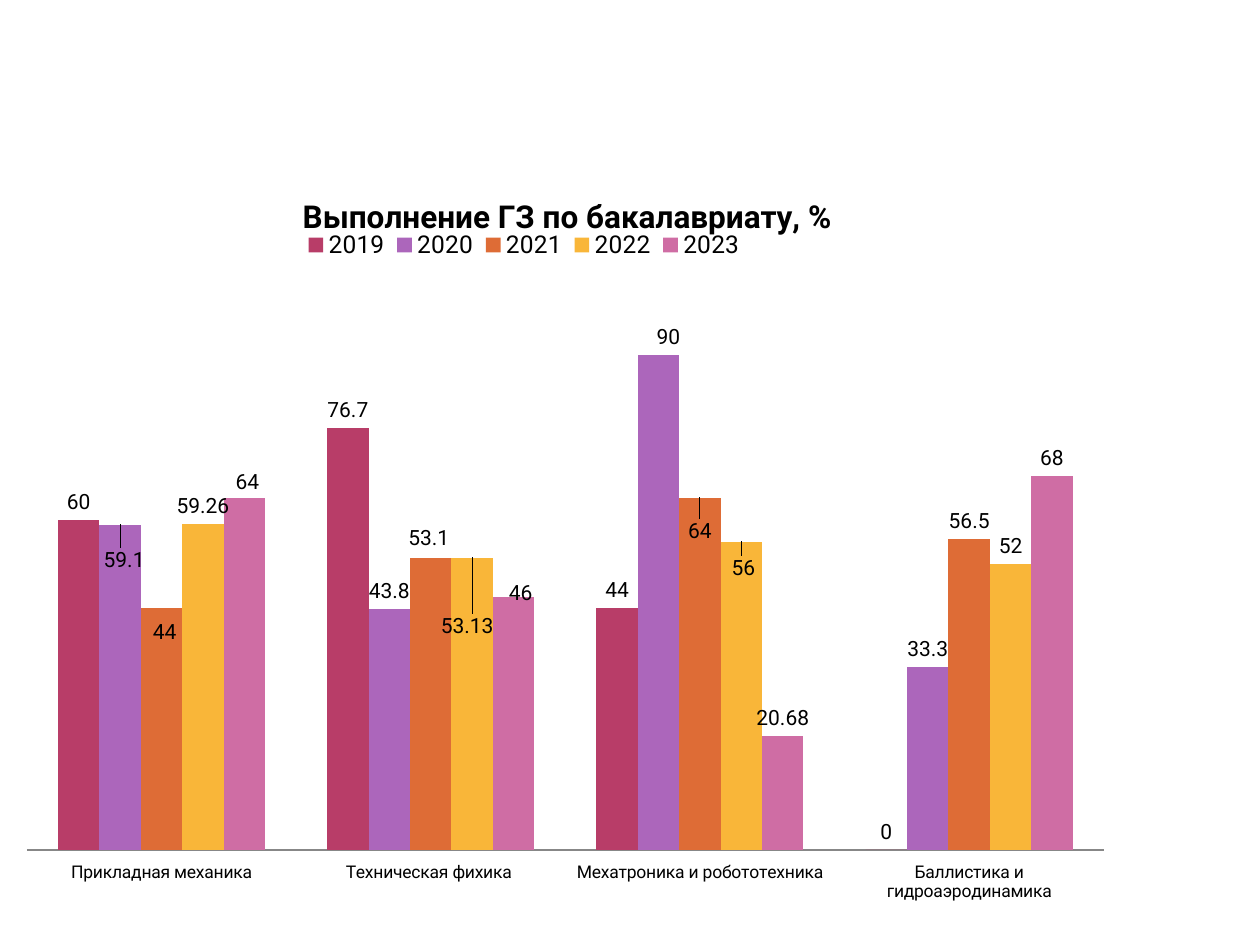
from dataclasses import dataclass

from lxml import etree
from pptx import Presentation
from pptx.chart.data import CategoryChartData
from pptx.dml.color import RGBColor
from pptx.enum.chart import XL_CHART_TYPE as ChartType
from pptx.enum.chart import XL_LABEL_POSITION as LabelPos
from pptx.enum.chart import XL_LEGEND_POSITION as LegendPos
from pptx.enum.chart import XL_TICK_LABEL_POSITION as TickLabelPos
from pptx.enum.chart import XL_TICK_MARK as TickMark
from pptx.oxml.ns import qn
from pptx.util import Emu, Pt

PX = 914400 // 126
CHART_BOX = (5, 165, 1121, 745)
PLOT_BOX = (27, 300, 1077, 550)
TITLE_AT = (297, 190)
LEGEND_BOX = (296, 230, 456, 30)


@dataclass(frozen=True)
class Theme:
    """Colours and type of the slide."""
    font: str = "Roboto"
    text: str = "000000"
    axis: str = "878787"
    title: int = 18
    legend: int = 14
    label: int = 12
    category: int = 10


THEME = Theme()
TITLE = "Выполнение ГЗ по бакалавриату, %"
CATEGORIES = ["Прикладная механика", "Техническая фихика ",
              "Мехатроника и робототехника", "Баллистика и гидроаэродинамика"]
SERIES = [
    ("2019", "B83D68", (60, 76.7, 44, 0)),
    ("2020", "AC66BB", (59.1, 43.8, 90, 33.3)),
    ("2021", "DE6C36", (44, 53.1, 64, 56.5)),
    ("2022", "F9B639", (59.26, 53.13, 56, 52)),
    ("2023", "CF6DA4", (64, 46, 20.68, 68)),
]
LABEL_SHIFTS = {
    "2020": {0: (4, 53), 2: (10, 0)},
    "2021": {0: (3, 42), 1: (-2, -2), 2: (0, 51)},
    "2022": {1: (-5, 86), 2: (2, 44)},
    "2023": {0: (3, 2), 1: (7, 14)},
}


def px(n):
    """Turn pixels into EMU."""
    return Emu(n * PX)


def style_font(font, size, bold=False):
    """Apply the theme's face and colour at a size."""
    font.name = THEME.font
    font.size = Pt(size)
    font.bold = bold
    font.color.rgb = RGBColor.from_string(THEME.text)


def set_layout(parent, index, sizes, inner=False, edge=True):
    """Insert a manual layout, given in pixels, as a child of a chart part."""
    for old in parent.findall(qn("c:layout")):
        parent.remove(old)
    layout = etree.Element(qn("c:layout"))
    manual = etree.SubElement(layout, qn("c:manualLayout"))
    fields = [("layoutTarget", "inner")] if inner else []
    if edge:
        fields += [("xMode", "edge"), ("yMode", "edge")]
    for i, (name, size) in enumerate(zip("xywh", sizes)):
        origin = CHART_BOX[i] if edge and i < 2 else 0
        fields.append((name, str(round((size - origin) / CHART_BOX[2 + i % 2], 4))))
    for name, value in fields:
        etree.SubElement(manual, qn(f"c:{name}")).set("val", value)
    parent.insert(index, layout)


def add_column_chart(slide):
    """Add the clustered column chart with its data."""
    data = CategoryChartData()
    data.categories = CATEGORIES
    for name, _, values in SERIES:
        data.add_series(name, values)
    frame = slide.shapes.add_chart(
        ChartType.COLUMN_CLUSTERED, *map(px, CHART_BOX), data)
    chart = frame.chart
    style_font(chart.font, THEME.category)
    set_layout(chart.plots[0]._element.getparent(), 0, PLOT_BOX, inner=True)
    return chart


def style_title(chart):
    """Write and place the chart title."""
    title = chart.chart_title
    p = title.text_frame.paragraphs[0]
    r = p.add_run()
    r.text = TITLE
    style_font(r.font, THEME.title, bold=True)
    set_layout(title._element, 1, TITLE_AT)


def style_legend(chart):
    """Show the legend under the title."""
    chart.has_legend = True
    legend = chart.legend
    legend.position = LegendPos.TOP
    legend.include_in_layout = False
    style_font(legend.font, THEME.legend)
    set_layout(legend._element, 1, LEGEND_BOX)


def style_axes(chart):
    """Keep only the category line and its labels."""
    axis = chart.category_axis
    axis.major_tick_mark = axis.minor_tick_mark = TickMark.NONE
    axis.tick_label_position = TickLabelPos.LOW
    axis.format.line.color.rgb = RGBColor.from_string(THEME.axis)
    axis.format.line.width = Pt(1)
    style_font(axis.tick_labels.font, THEME.category)
    values = chart.value_axis
    values.minimum_scale, values.maximum_scale = 0, 100
    values.has_major_gridlines = False
    values.visible = False


def style_series(chart):
    """Colour the columns and place their value labels."""
    plot = chart.plots[0]
    plot.gap_width, plot.overlap = 150, 0
    plot.vary_by_categories = False
    for s, (name, color, _) in zip(plot.series, SERIES):
        s.format.fill.solid()
        s.format.fill.fore_color.rgb = RGBColor.from_string(color)
        s.invert_if_negative = False
        labels = s.data_labels
        labels.show_value = True
        labels.position = LabelPos.OUTSIDE_END
        style_font(labels.font, THEME.label)
        for i, shift in LABEL_SHIFTS.get(name, {}).items():
            label = s.points[i].data_label
            label.position = LabelPos.OUTSIDE_END
            style_font(label.font, THEME.label)
            dlbl = labels._element.findall(qn("c:dLbl"))[-1]
            set_layout(dlbl, 1, shift, edge=False)


def main():
    """Build and save the slide."""
    prs = Presentation()
    prs.slide_width, prs.slide_height = px(1260), px(945)
    slide = prs.slides.add_slide(prs.slide_layouts[6])
    chart = add_column_chart(slide)
    for style in (style_title, style_legend, style_axes, style_series):
        style(chart)
    prs.save("out.pptx")


if __name__ == "__main__":
    main()
